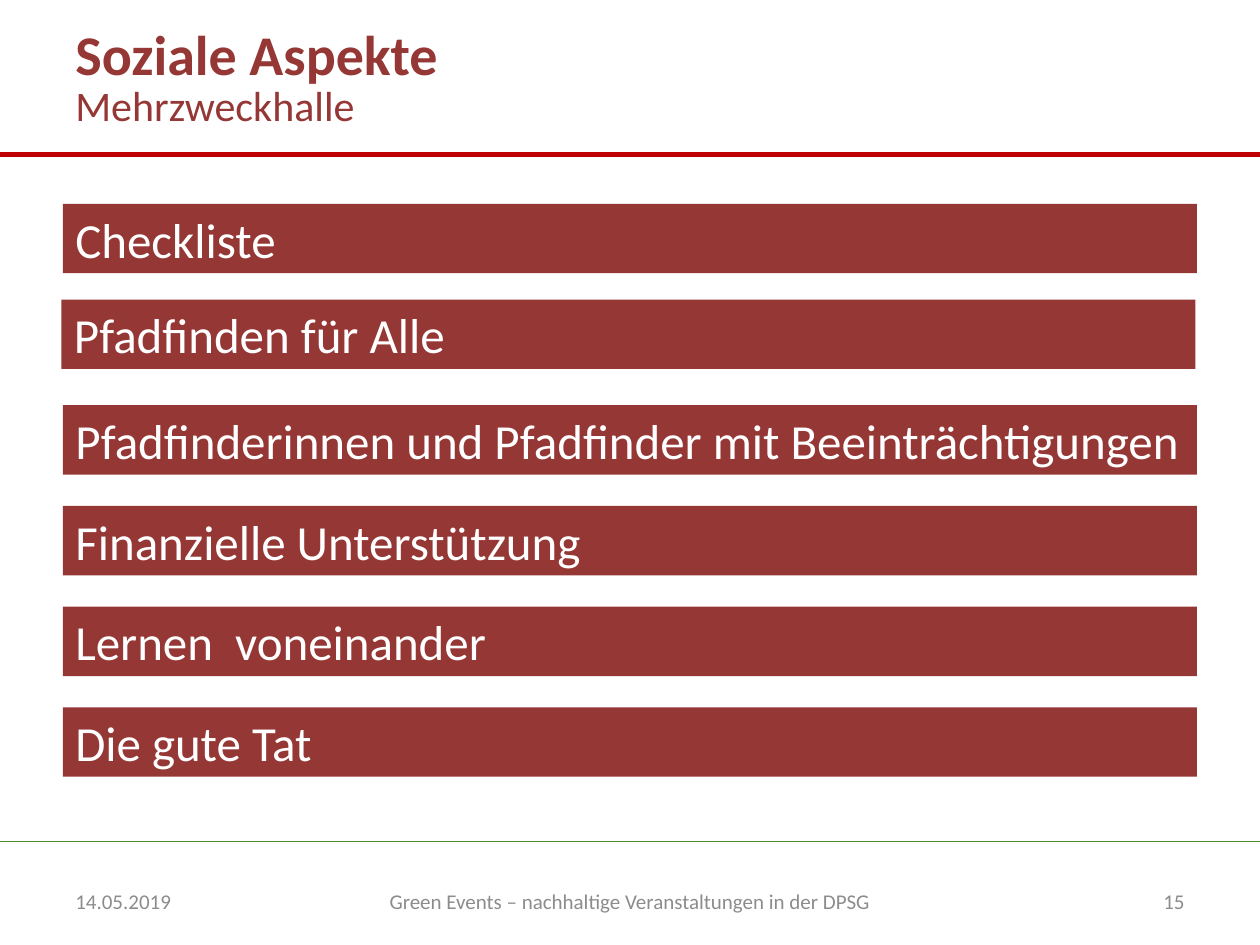
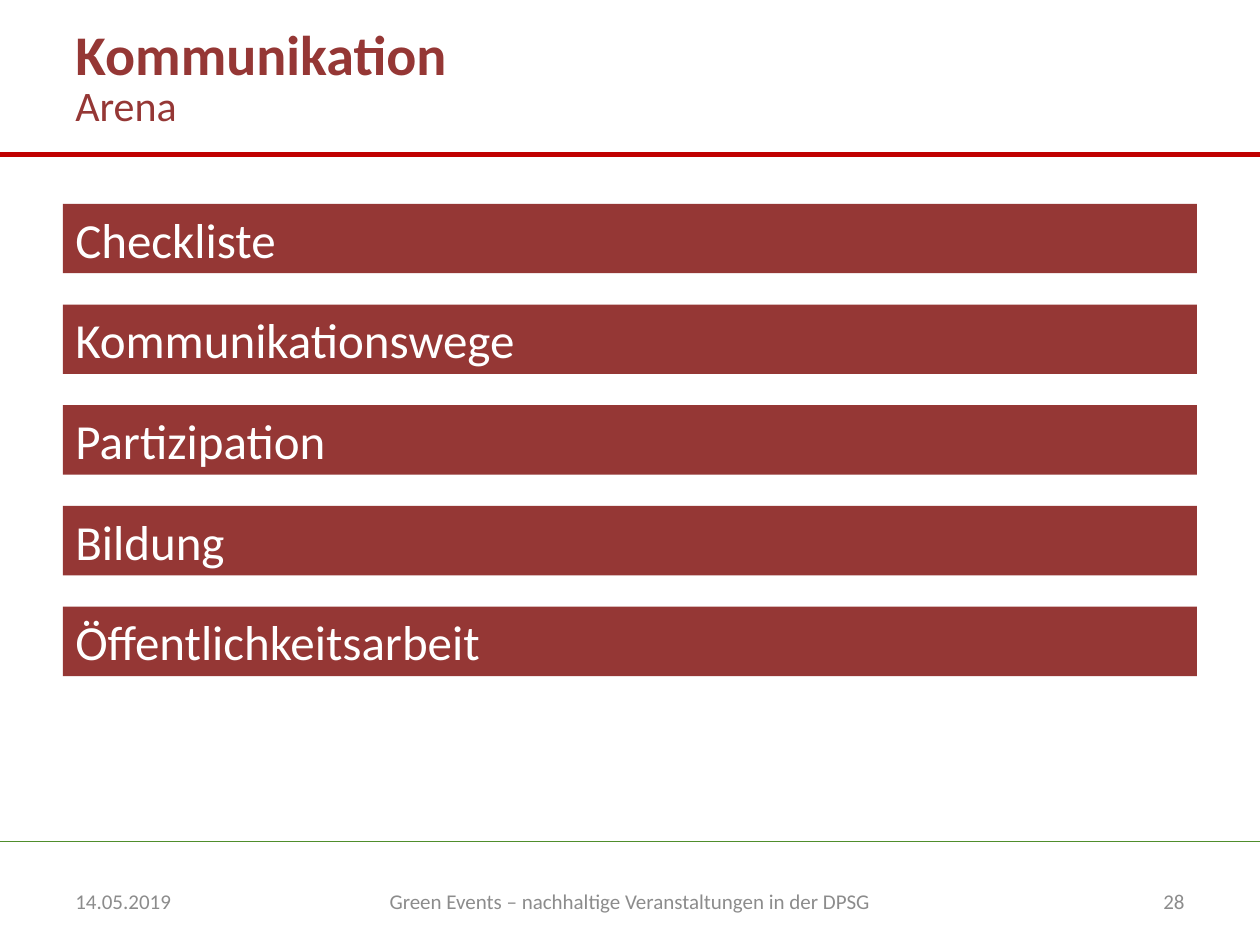
import pptx
import pptx.dml.color
import pptx.enum.shapes
import pptx.enum.text
import pptx.oxml.ns
import pptx.util
from lxml import etree

Cm = pptx.util.Cm
Pt = pptx.util.Pt
RGBColor = pptx.dml.color.RGBColor
ALIGN = pptx.enum.text.PP_ALIGN

DATE = "14.05.2019"
EVENT = "Green Events – nachhaltige Veranstaltungen in der DPSG"
CHAPTERS = [
    {
        "title": "Soziale Aspekte",
        "place": "Mehrzweckhalle",
        "number": "15",
        "topics": [
            "Checkliste",
            "Pfadfinden für Alle",
            "Pfadfinderinnen und Pfadfinder mit Beeinträchtigungen",
            "Finanzielle Unterstützung",
            "Lernen  voneinander",
            "Die gute Tat",
        ],
        "nudges": {1: (-0.03, -0.1)},
    },
    {
        "title": "Kommunikation",
        "place": "Arena",
        "number": "28",
        "topics": [
            "Checkliste",
            "Kommunikationswege",
            "Partizipation",
            "Bildung",
            "Öffentlichkeitsarbeit",
        ],
        "nudges": {},
    },
]

FONT = "Calibri"
MAROON = RGBColor(0x95, 0x37, 0x35)
RED = RGBColor(0xC0, 0x00, 0x00)
GREEN = RGBColor(0x4F, 0x8D, 0x2C)
GREY = RGBColor(0x8C, 0x8C, 0x8C)
WHITE = RGBColor(0xFF, 0xFF, 0xFF)

WIDTH, HEIGHT = 25.4, 19.05
MARGIN = 1.27
HEADING_WIDTH = 16.93
BAR_TOP, BAR_HEIGHT, BAR_PITCH = 4.11, 1.4, 2.03
FOOTER_TOP, FOOTER_HEIGHT = 17.65, 1.02
SIDE_WIDTH, EVENT_WIDTH = 5.93, 10.2


def write(shape, text, size, color, bold=False, align=ALIGN.LEFT):
    frame = shape.text_frame
    frame.word_wrap = True
    frame.vertical_anchor = pptx.enum.text.MSO_ANCHOR.MIDDLE
    paragraph = frame.paragraphs[0]
    paragraph.alignment = align
    run = paragraph.add_run()
    run.text = text
    run.font.name = FONT
    run.font.size = Pt(size)
    run.font.bold = bold
    run.font.color.rgb = color


def add_label(slide, left, top, width, height, text, size, color, **style):
    label = slide.shapes.add_textbox(Cm(left), Cm(top), Cm(width), Cm(height))
    write(label, text, size, color, **style)


def add_rule(slide, top, right, color, weight):
    rule = slide.shapes.add_connector(
        pptx.enum.shapes.MSO_CONNECTOR.STRAIGHT, 0, Cm(top), Cm(right), Cm(top)
    )
    rule.line.color.rgb = color
    rule.line.width = Pt(weight)
    etree.SubElement(rule._element.spPr, pptx.oxml.ns.qn("a:effectLst"))


def add_topic(slide, left, top, topic):
    bar = slide.shapes.add_shape(
        pptx.enum.shapes.MSO_SHAPE.RECTANGLE,
        Cm(left), Cm(top), Cm(WIDTH - 2 * MARGIN), Cm(BAR_HEIGHT),
    )
    bar.shadow.inherit = False
    bar.fill.solid()
    bar.fill.fore_color.rgb = MAROON
    bar.line.fill.background()
    write(bar, topic, 28, WHITE)


def add_footer(slide, number):
    entries = [
        (DATE, MARGIN, SIDE_WIDTH, ALIGN.LEFT),
        (EVENT, (WIDTH - EVENT_WIDTH) / 2, EVENT_WIDTH, ALIGN.CENTER),
        (number, WIDTH - MARGIN - SIDE_WIDTH, SIDE_WIDTH, ALIGN.RIGHT),
    ]
    for text, left, width, align in entries:
        add_label(slide, left, FOOTER_TOP, width, FOOTER_HEIGHT, text, 12, GREY, align=align)


def add_chapter(deck, chapter):
    slide = deck.slides.add_slide(deck.slide_layouts[6])
    add_rule(slide, 16.97, WIDTH, GREEN, 0.75)
    add_rule(slide, 3.12, 25.7, RED, 3)
    add_label(slide, MARGIN, 0.03, HEADING_WIDTH, 2.08, chapter["title"], 32, MAROON, bold=True)
    add_label(slide, MARGIN, 1.52, HEADING_WIDTH, 1.19, chapter["place"], 24, MAROON)
    for row, topic in enumerate(chapter["topics"]):
        right, down = chapter["nudges"].get(row, (0, 0))
        add_topic(slide, MARGIN + right, BAR_TOP + row * BAR_PITCH + down, topic)
    add_footer(slide, chapter["number"])


def main():
    deck = pptx.Presentation()
    deck.slide_width = Cm(WIDTH)
    deck.slide_height = Cm(HEIGHT)
    for chapter in CHAPTERS:
        add_chapter(deck, chapter)
    deck.save("out.pptx")


if __name__ == "__main__":
    main()
